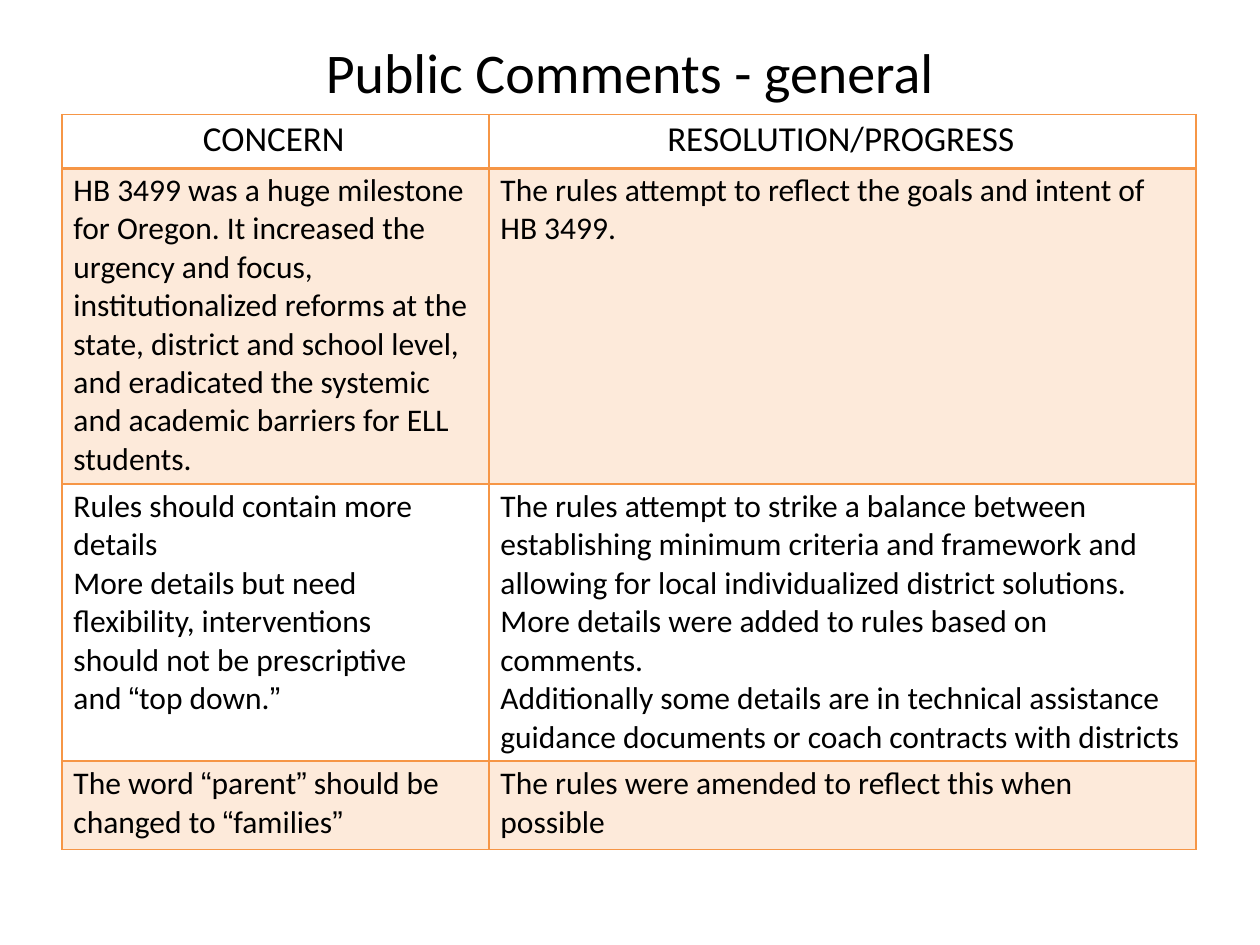
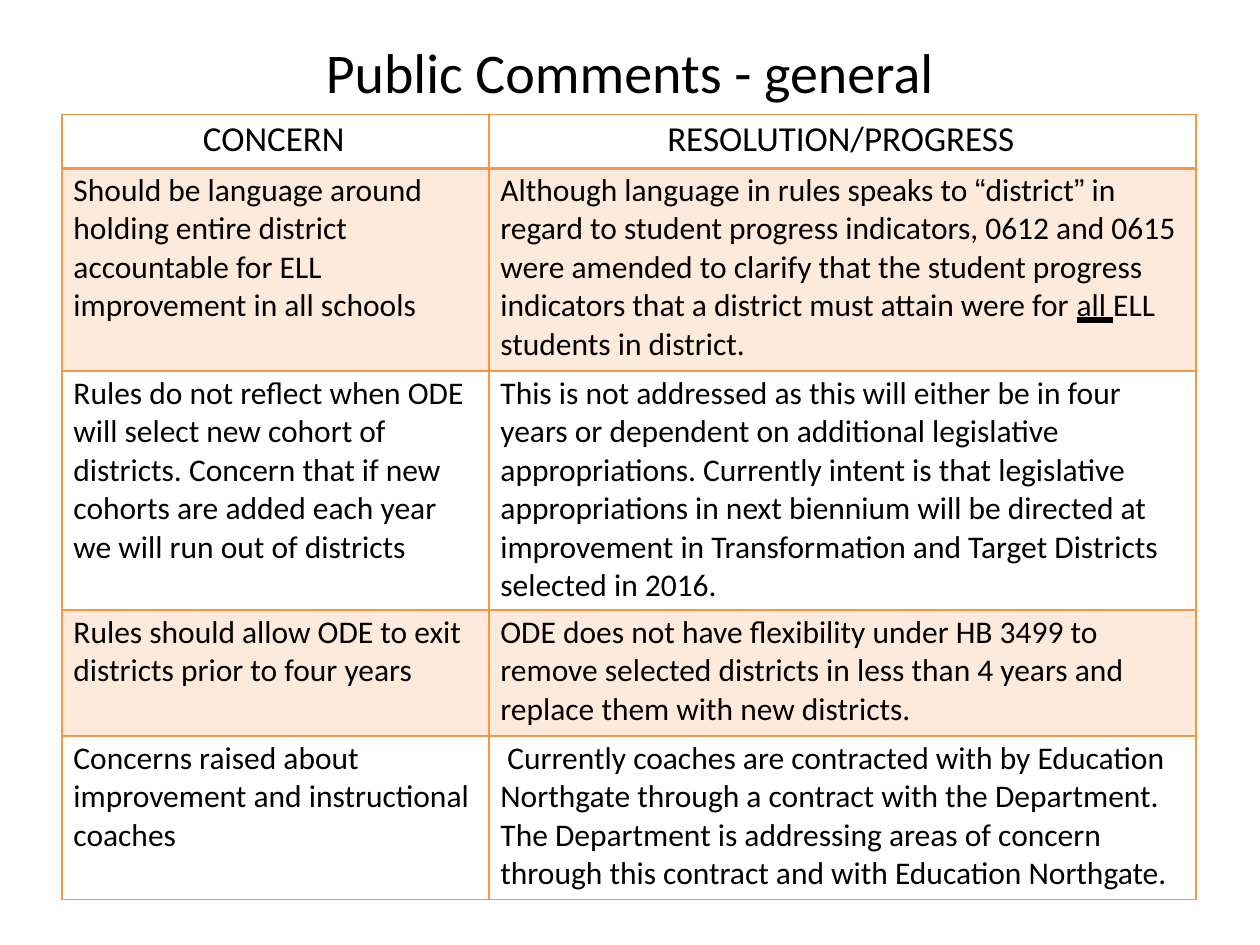
from dataclasses import dataclass
from itertools import groupby

from lxml import etree
from pptx import Presentation
from pptx.dml.color import RGBColor
from pptx.enum import text
from pptx.oxml.ns import qn
from pptx.util import Pt


@dataclass(frozen=True)
class Theme:
    ink: str = "000000"
    accent: str = "F69646"
    band_alpha: int = 20000
    font: str = "Calibri"
    quote_font: str = "Arial"
    title_size: int = 32
    head_size: int = 20
    body_size: int = 18
    line: float = 1
    head_line: float = 2


class Deck:
    def __init__(self, theme):
        self.theme = theme
        self.prs = Presentation()
        self.prs.slide_width, self.prs.slide_height = Pt(720), Pt(540)
        self.s = None

    def slide(self):
        self.s = self.prs.slides.add_slide(self.prs.slide_layouts[6])

    def runs(self, p, content, size):
        for i, part in enumerate(content.split("_")):
            for is_quote, chars in groupby(part, lambda c: c in "“”"):
                r = p.add_run()
                r.text = "".join(chars)
                r.font.name = self.theme.quote_font if is_quote else self.theme.font
                r.font.size = Pt(size)
                r.font.color.rgb = RGBColor.from_string(self.theme.ink)
                if i % 2:
                    r.font.underline = text.MSO_UNDERLINE.HEAVY_LINE

    def title(self, content):
        tf = self.s.shapes.add_textbox(Pt(185), Pt(21.5), Pt(350), Pt(39.5)).text_frame
        tf.word_wrap = True
        tf.margin_left = tf.margin_right = tf.margin_top = tf.margin_bottom = 0
        p = tf.paragraphs[0]
        p.alignment = text.PP_ALIGN.CENTER
        self.runs(p, content, self.theme.title_size)

    def borders(self, cell, top, bottom):
        tc_pr = cell._tc.get_or_add_tcPr()
        widths = {"lnL": self.theme.line, "lnR": self.theme.line, "lnT": top, "lnB": bottom}
        for tag, width in widths.items():
            ln = etree.SubElement(tc_pr, qn("a:" + tag), w=str(Pt(width)))
            fill = etree.SubElement(ln, qn("a:solidFill"))
            etree.SubElement(fill, qn("a:srgbClr"), val=self.theme.accent)

    def fill(self, cell, banded):
        if not banded:
            cell.fill.background()
            return
        cell.fill.solid()
        cell.fill.fore_color.rgb = RGBColor.from_string(self.theme.accent)
        color = cell._tc.tcPr.find(qn("a:solidFill")).find(qn("a:srgbClr"))
        etree.SubElement(color, qn("a:alpha"), val=str(self.theme.band_alpha))

    def cell(self, cell, content, row, right=9, first_indent=0):
        t = self.theme
        head = row == 0
        self.borders(cell, t.head_line if row == 1 else t.line, t.head_line if head else t.line)
        self.fill(cell, row % 2 == 1)
        cell.margin_left = Pt(0 if head else 6.5)
        cell.margin_right = Pt(2 if head else right)
        cell.margin_top = Pt(1.4 if row == 1 else 2)
        cell.margin_bottom = 0
        tf = cell.text_frame
        for i, paragraph in enumerate(content.split("\n")):
            p = tf.add_paragraph() if i else tf.paragraphs[0]
            p.alignment = text.PP_ALIGN.CENTER if head else text.PP_ALIGN.LEFT
            if i == 0:
                p.space_before = Pt(1.4 if row == 1 else 1.9)
            if first_indent:
                p._p.get_or_add_pPr().set("indent", str(Pt(first_indent)))
            self.runs(p, paragraph, t.head_size if head else t.body_size)

    def table(self, heights, rows, tweaks):
        frame = self.s.shapes.add_table(
            len(rows), 2, Pt(35.5), Pt(65.5), Pt(648), Pt(sum(heights)))
        table = frame.table
        table.first_row = table.horz_banding = False
        for column, width in zip(table.columns, (244, 404)):
            column.width = Pt(width)
        for i, (height, row) in enumerate(zip(heights, rows)):
            table.rows[i].height = Pt(height)
            for j, content in enumerate(row):
                self.cell(table.cell(i, j), content, i, **tweaks.get((i, j), {}))


HEADER = ("CONCERN", "RESOLUTION/PROGRESS")

COMMENT_SLIDES = [
    (
        (31, 180, 158.5, 50.5),
        [
            ("HB 3499 was a huge milestone for Oregon. It increased the urgency and focus, "
             "institutionalized reforms at the state, district and school level, and "
             "eradicated the systemic and academic barriers for ELL students.",
             "The rules attempt to reflect the goals and intent of HB 3499."),
            ("Rules should contain more details\n"
             "More details but need flexibility, interventions should not be prescriptive "
             "and “top down.”",
             "The rules attempt to strike a balance between establishing minimum criteria "
             "and framework and allowing for local individualized district solutions. "
             "More details were added to rules based on comments.\n"
             "Additionally some details are in technical assistance guidance documents or "
             "coach contracts with districts"),
            ("The word “parent” should be changed to “families”",
             "The rules were amended to reflect this when possible"),
        ],
        {(2, 0): {"right": 25}, (3, 1): {"right": 20}},
    ),
    (
        (31, 115.5, 136.5, 72, 93.5),
        [
            ("Should be language around holding entire district accountable for ELL "
             "improvement in all schools",
             "Although language in rules speaks to “district” in regard to student progress "
             "indicators, 0612 and 0615 were amended to clarify that the student progress "
             "indicators that a district must attain were for _all _ELL students in district."),
            ("Rules do not reflect when ODE will select new cohort of districts. Concern "
             "that if new cohorts are added each year we will run out of districts",
             "This is not addressed as this will either be in four years or dependent on "
             "additional legislative appropriations. Currently intent is that legislative "
             "appropriations in next biennium will be directed at improvement in "
             "Transformation and Target Districts selected in 2016."),
            ("Rules should allow ODE to exit districts prior to four years",
             "ODE does not have flexibility under HB 3499 to remove selected districts in "
             "less than 4 years and replace them with new districts."),
            ("Concerns raised about improvement and instructional coaches",
             "Currently coaches are contracted with by Education Northgate through a "
             "contract with the Department. The Department is addressing areas of concern "
             "through this contract and with Education Northgate."),
        ],
        {(4, 1): {"first_indent": 4}},
    ),
]


def main():
    deck = Deck(Theme())
    for heights, comments, tweaks in COMMENT_SLIDES:
        deck.slide()
        deck.title("Public Comments - general")
        deck.table(heights, [HEADER, *comments], tweaks)
    deck.prs.save("out.pptx")


if __name__ == "__main__":
    main()
